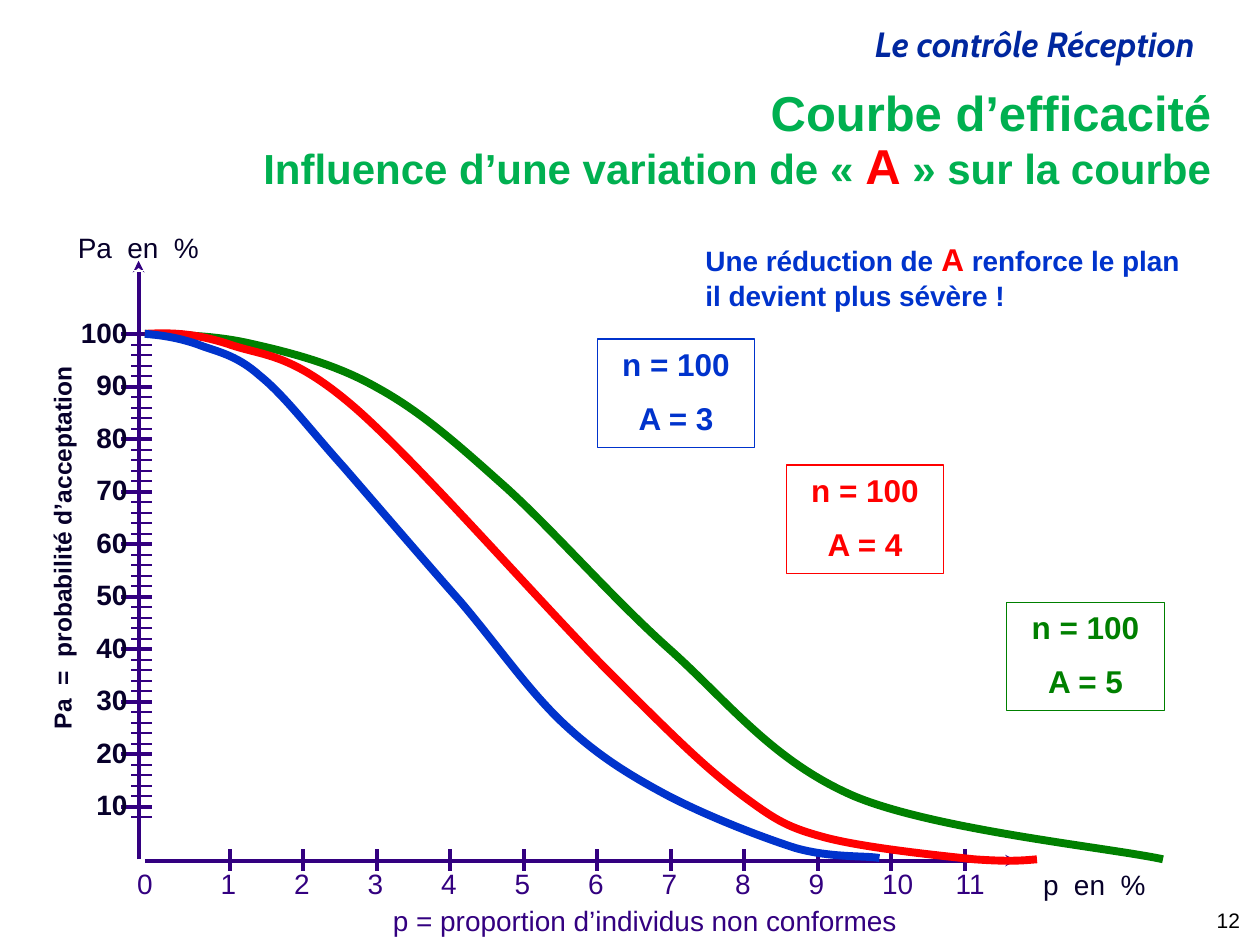
from lxml import etree
from pptx import Presentation
from pptx.dml.color import RGBColor
from pptx.enum.shapes import MSO_CONNECTOR, MSO_SHAPE
from pptx.enum.text import MSO_ANCHOR, PP_ALIGN
from pptx.oxml.ns import qn
from pptx.util import Inches, Pt

LEFT, CENTER, RIGHT = PP_ALIGN.LEFT, PP_ALIGN.CENTER, PP_ALIGN.RIGHT
TOP, MIDDLE = MSO_ANCHOR.TOP, MSO_ANCHOR.MIDDLE
STRAIGHT, RECTANGLE = MSO_CONNECTOR.STRAIGHT, MSO_SHAPE.RECTANGLE

NAVY = RGBColor(0x00, 0x27, 0x9F)
PURPLE = RGBColor(0x33, 0x00, 0x80)
DARK = RGBColor(0x07, 0x00, 0x2A)
TITLE_GREEN = RGBColor(0x00, 0xB0, 0x50)
GREEN = RGBColor(0x00, 0x80, 0x00)
RED = RGBColor(0xFF, 0x00, 0x00)
BLUE = RGBColor(0x00, 0x33, 0xCC)
BLACK = RGBColor(0x00, 0x00, 0x00)
WHITE = RGBColor(0xFF, 0xFF, 0xFF)

X_ZERO, X_STEP = 1.24, 7 / 12
Y_ZERO, Y_STEP = 6.82, 5 / 12

# Each curve: start point, then Bezier segments (two control points and an end).
CURVE_START = (1.15, 2.65)
GREEN_CURVE = [
    (1.42, 2.66), (1.7, 2.66), (2, 2.73),
    (2.31, 2.8), (2.66, 2.89), (2.98, 3.07),
    (3.31, 3.25), (3.57, 3.47), (3.96, 3.82),
    (4.35, 4.16), (4.84, 4.73), (5.31, 5.15),
    (5.78, 5.57), (6.13, 6.04), (6.78, 6.32),
    (7.43, 6.59), (8.82, 6.73), (9.23, 6.82),
]
RED_CURVE = [
    (1.34, 2.64), (1.53, 2.64), (1.81, 2.73),
    (2.09, 2.83), (2.3, 2.79), (2.81, 3.23),
    (3.33, 3.68), (4.38, 4.89), (4.9, 5.4),
    (5.41, 5.91), (5.62, 6.11), (5.9, 6.32),
    (6.17, 6.52), (6.26, 6.57), (6.56, 6.65),
    (6.87, 6.73), (7.45, 6.79), (7.73, 6.82),
    (8.01, 6.84), (8.12, 6.83), (8.23, 6.82),
]
BLUE_CURVE = [
    (1.28, 2.66), (1.41, 2.68), (1.56, 2.73),
    (1.71, 2.79), (1.87, 2.81), (2.06, 2.98),
    (2.26, 3.14), (2.46, 3.41), (2.73, 3.71),
    (2.99, 4.01), (3.35, 4.43), (3.65, 4.77),
    (3.94, 5.11), (4.2, 5.49), (4.48, 5.75),
    (4.76, 6.01), (5.01, 6.16), (5.31, 6.32),
    (5.62, 6.48), (6.03, 6.64), (6.31, 6.73),
    (6.59, 6.81), (6.87, 6.79), (6.98, 6.81),
]


class ChartPage:
    """Holds the slide and the text style shared by its elements."""

    font = "Arial"
    size = 16

    def __init__(self, page):
        self.page = page
        self.shapes = page.shapes

    def style(self, span, color, size=None, bold=False, italic=False, font=None):
        span.font.name = font or self.font
        span.font.size = Pt(size or self.size)
        span.font.bold = bold
        span.font.italic = italic
        span.font.color.rgb = color

    def text(self, area, text, color, align=LEFT, anchor=TOP, outline=None, **style):
        """Adds text, in a rectangle when an outline colour is given."""
        place = [Inches(value) for value in area]
        if outline is None:
            box = self.shapes.add_textbox(*place)
        else:
            box = self.shapes.add_shape(RECTANGLE, *place)
            box.shadow.inherit = False
            box.fill.background()
            box.line.color.rgb = outline
            box.line.width = Pt(0.75)
        frame = box.text_frame
        frame.word_wrap = True
        frame.vertical_anchor = anchor
        frame.text = text
        for index, para in enumerate(frame.paragraphs):
            para.alignment = align
            if index:
                para.space_before = Pt(style.get("size", self.size) / 2)
            for span in para.runs:
                self.style(span, color, **style)
        return box

    def mixed_text(self, area, lines, align=LEFT, anchor=TOP, spacing=1.0):
        """Adds one paragraph of bold (text, colour, size) parts, line by line."""
        box = self.text(area, "", BLACK, align, anchor)
        para = box.text_frame.paragraphs[0]
        para.line_spacing = spacing
        for index, parts in enumerate(lines):
            if index:
                para.add_line_break()
            for text, color, size in parts:
                span = para.add_run()
                span.text = text
                self.style(span, color, size, bold=True)

    def line(self, x1, y1, x2, y2, width=2.25, arrow=False):
        line = self.shapes.add_connector(
            STRAIGHT, Inches(x1), Inches(y1), Inches(x2), Inches(y2))
        line.line.color.rgb = PURPLE
        line.line.width = Pt(width)
        properties = line.element.spPr
        if arrow:
            etree.SubElement(properties.find(qn("a:ln")), qn("a:tailEnd"), type="stealth")
        etree.SubElement(properties, qn("a:effectLst"))

    def curve(self, points, color):
        """Draws a smooth outline, three points to a Bezier segment."""
        builder = self.shapes.build_freeform(*map(Inches, CURVE_START))
        builder.add_line_segments(
            [(Inches(x), Inches(y)) for x, y in points], close=False)
        curve = builder.convert_to_shape()
        curve.shadow.inherit = False
        curve.fill.background()
        curve.line.color.rgb = color
        curve.line.width = Pt(4.5)
        outline = next(curve.element.iter(qn("a:path")))
        steps = outline.findall(qn("a:lnTo"))
        for first in range(0, len(steps), 3):
            segment = etree.SubElement(outline, qn("a:cubicBezTo"))
            for step in steps[first:first + 3]:
                segment.append(step[0])
                outline.remove(step)


def draw_axes(chart):
    chart.line(1.1, Y_ZERO, 1.1, 2.07, arrow=True)
    for percent in range(8, 101, 2):
        y = Y_ZERO - percent / 10 * Y_STEP
        chart.line(1.04, y, 1.21, y, width=1)
        if percent % 10 == 0:
            chart.line(0.96, y, 1.21, y)
            chart.text((0.44, y - 0.2, 0.67, 0.37), str(percent), DARK, RIGHT, bold=True)

    chart.line(1.15, 6.83, 8.07, 6.83, arrow=True)
    chart.text((0.99, 6.83, 0.33, 0.37), "0", PURPLE)
    for value in range(1, 12):
        x = X_ZERO + value * X_STEP
        chart.line(x, 6.74, x, 6.91)
        width = 0.33 if value < 10 else 0.5
        chart.text((x - 0.17, 6.83, width, 0.37), str(value), PURPLE)

    chart.text((3.02, 7.12, 4.25, 0.37), "p = proportion d’individus non conformes",
               PURPLE, outline=WHITE)
    chart.text((8.18, 6.84, 1.17, 0.37), "p  en  %", DARK)
    chart.text((0.52, 1.78, 1.17, 0.37), "Pa  en  %", DARK, outline=WHITE)
    axis_name = chart.text((-1.27, 3.95, 3.53, 0.34), "Pa  =  probabilité d’acceptation",
                           DARK, size=14, bold=True)
    axis_name.rotation = 270


def main():
    deck = Presentation()
    deck.slide_width, deck.slide_height = Inches(10), Inches(7.5)
    chart = ChartPage(deck.slides.add_slide(deck.slide_layouts[6]))

    chart.text((3.66, 0.13, 5.92, 0.43), "Le contrôle Réception", NAVY, RIGHT,
               size=20, bold=True, italic=True, font="Cabin")
    chart.mixed_text((1.79, 0.65, 7.92, 0.96), [
        [("Courbe d’efficacité", TITLE_GREEN, 28)],
        [("Influence d’une variation de «\u00a0", TITLE_GREEN, 24), ("A", RED, 28),
         ("\u00a0» sur la courbe", TITLE_GREEN, 24)],
    ], RIGHT, MIDDLE, spacing=0.9)

    draw_axes(chart)
    for left, top, limit, color in [
        (6.24, 3.69, 4, RED), (7.99, 4.78, 5, GREEN), (4.74, 2.69, 3, BLUE),
    ]:
        chart.text((left, top, 1.25, 0.86), f"n = 100\nA = {limit}", color, CENTER,
                   outline=color, size=18, bold=True)
    for points, color in [(GREEN_CURVE, GREEN), (RED_CURVE, RED), (BLUE_CURVE, BLUE)]:
        chart.curve(points, color)

    chart.text((7.69, 7.1, 2.25, 0.4), "12", BLACK, RIGHT, MIDDLE, size=12)
    chart.mixed_text((5.5, 1.86, 4.11, 0.67), [
        [("Une réduction de ", BLUE, 16), ("A", RED, 18),
         (" renforce le plan il devient plus sévère !", BLUE, 16)],
    ])
    deck.save("out.pptx")


if __name__ == "__main__":
    main()
